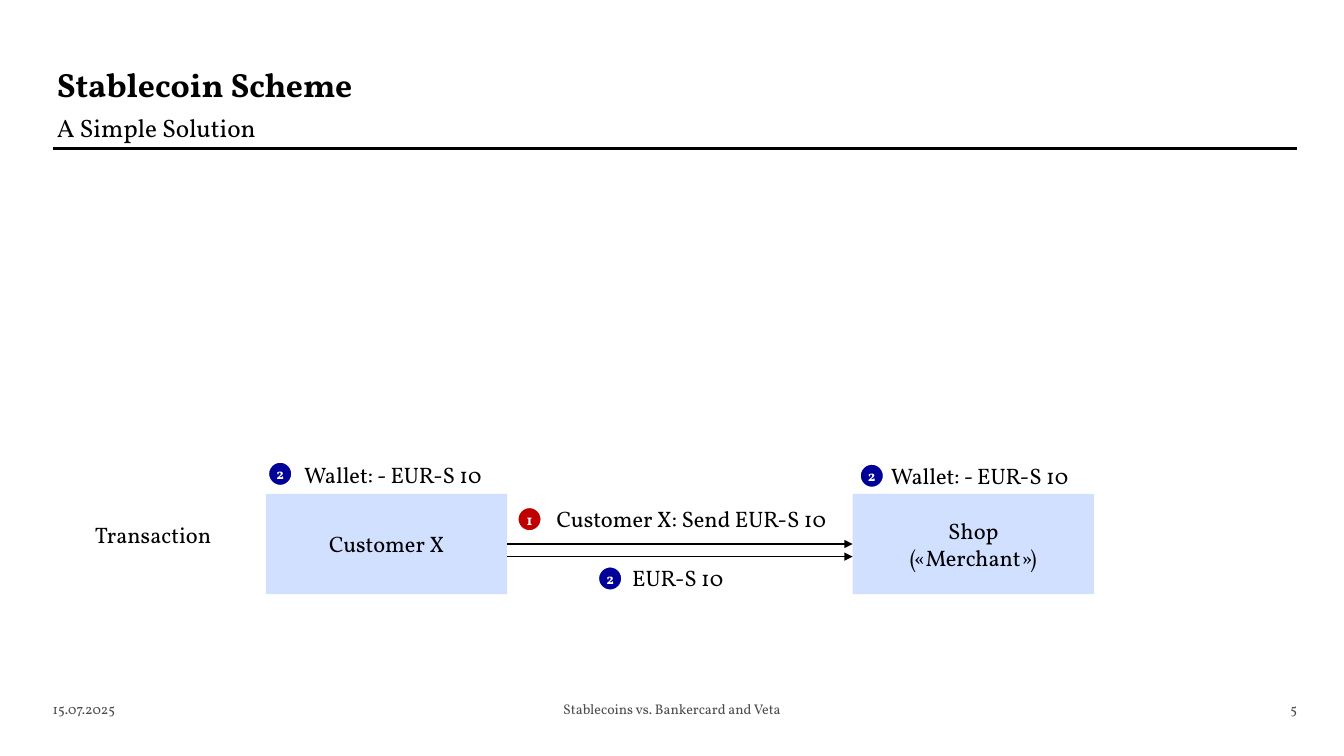
from dataclasses import dataclass

from lxml.etree import SubElement
from pptx import Presentation
from pptx.dml.color import RGBColor
from pptx.enum.shapes import MSO_CONNECTOR as Connector, MSO_SHAPE as Shape
from pptx.enum.text import MSO_ANCHOR as Anchor, MSO_AUTO_SIZE as AutoSize, PP_ALIGN as Align
from pptx.oxml.ns import qn
from pptx.util import Pt


@dataclass(frozen=True)
class Theme:
    font: str = "Vollkorn"
    ink: str = "000000"
    muted: str = "4D4D4D"
    light: str = "FFFFFF"
    party: str = "D1E0FF"
    request: str = "C00000"
    settlement: str = "000099"
    title: float = 24
    subtitle: float = 18
    label: float = 16
    badge: float = 10.5
    footer: float = 10


THEME = Theme()
INSET = 2.88
BADGE = 17.3


def write(shape, text, *, size=THEME.label, color=THEME.ink, bold=False, align=Align.LEFT,
          anchor=Anchor.TOP, inset=(INSET, INSET), spacing=None, after=0):
    """Fill a shape with one paragraph per line of text."""
    frame = shape.text_frame
    frame.auto_size = AutoSize.NONE
    frame.word_wrap = True
    frame.vertical_anchor = anchor
    frame.margin_left = frame.margin_right = Pt(inset[0])
    frame.margin_top = frame.margin_bottom = Pt(inset[1])
    frame.text = text
    for paragraph in frame.paragraphs:
        paragraph.alignment = align
        paragraph.line_spacing = spacing
        paragraph.space_before = Pt(0)
        paragraph.space_after = Pt(after)
        for run in paragraph.runs:
            font = run.font
            font.name, font.size, font.bold = THEME.font, Pt(size), bold
            font.color.rgb = RGBColor.from_string(color)


def place(shape, left, top, width, height):
    shape.left, shape.top, shape.width, shape.height = map(Pt, (left, top, width, height))


def add_text(slide, box, text, **style):
    write(slide.shapes.add_textbox(*map(Pt, box)), text, **style)


def add_filled(slide, kind, box, fill, outline=None):
    shape = slide.shapes.add_shape(kind, *map(Pt, box))
    shape.shadow.inherit = False
    shape.fill.solid()
    shape.fill.fore_color.rgb = RGBColor.from_string(fill)
    if outline:
        shape.line.color.rgb = RGBColor.from_string(outline)
        shape.line.width = Pt(1.5)
    else:
        shape.line.fill.background()
    return shape


def add_line(slide, start, end, width, arrow=False):
    line = slide.shapes.add_connector(Connector.STRAIGHT, *map(Pt, (*start, *end)))
    line.line.color.rgb = RGBColor.from_string(THEME.ink)
    line.line.width = Pt(width)
    if arrow:
        SubElement(line.line._get_or_add_ln(), qn("a:tailEnd"), type="triangle")
    SubElement(line._element.spPr, qn("a:effectLst"))
    return line


def add_heading(slide, left, top, width, title, subtitle):
    heading, body = slide.placeholders
    place(heading, left, top, 720, 28)
    write(heading, title, size=THEME.title, bold=True, spacing=0.9)
    place(body, left, top + 29.5, width, 24)
    write(body, subtitle, size=THEME.subtitle, spacing=1.1, after=4)
    properties = body.text_frame.paragraphs[0]._p.get_or_add_pPr()
    properties.set("marL", "0")
    properties.set("indent", "0")
    SubElement(properties, qn("a:buNone"))
    add_line(slide, (left, top + 60), (left + width, top + 60), 2.25)


def add_party(slide, box, name):
    party = add_filled(slide, Shape.RECTANGLE, box, THEME.party)
    write(party, name, align=Align.CENTER, anchor=Anchor.MIDDLE)
    return party


def add_step(slide, left, top, number, color, label, label_offset, label_width):
    """Numbered badge with its label to the right."""
    badge = add_filled(slide, Shape.OVAL, (left, top, BADGE, BADGE), color, THEME.light)
    write(badge, number, size=THEME.badge, color=THEME.light, bold=True,
          align=Align.CENTER, anchor=Anchor.MIDDLE)
    add_text(slide, (left + label_offset[0], top + label_offset[1], label_width, 26.6),
             label, inset=(7.2, 3.6))


def add_transaction(slide, left, top):
    party_width, party_height, gap = 172.3, 71.6, 246.7
    customer_left = left + 122.4
    customer_right = customer_left + party_width
    shop_left = customer_right + gap
    middle = top + party_height / 2

    add_text(slide, (left, top + 19.4, 99.4, 19.4), "Transaction", inset=(0, 0))
    customer = add_party(slide, (customer_left, top, party_width, party_height), "Customer X")
    shop = add_party(slide, (shop_left, top, party_width, party_height), "Shop\n(«Merchant»)")

    # Request and transfer arrows
    request = add_line(slide, (customer_right, middle), (shop_left, middle), 0.75, arrow=True)
    request.begin_connect(customer, 3)
    request.end_connect(shop, 1)
    transfer = middle + 9
    add_line(slide, (customer_right, transfer), (shop_left, transfer), 0.75, arrow=True)

    # Numbered steps
    wallet = "Wallet: - EUR-S 10"
    steps = [
        (customer_right + 7.2, top + 9.4, "1", THEME.request,
         "Customer X: Send EUR-S 10", (20.9, -5), 226),
        (customer_left + 1.4, top - 23, "2", THEME.settlement, wallet, (18.7, -3.6), 152),
        (shop_left + 5, top - 21.6, "2", THEME.settlement, wallet, (15.1, -4.3), 152),
        (customer_right + 64.8, top + 51.8, "2", THEME.settlement, "EUR-S 10", (17.3, -5), 84),
    ]
    for step in steps:
        add_step(slide, *step)


def add_footer(slide, left, top, width, date, title, number):
    for text, align in ((date, Align.LEFT), (title, Align.CENTER), (number, Align.RIGHT)):
        part_width = 324 if align == Align.CENTER else 180
        part_left = {Align.LEFT: left, Align.CENTER: 480 - part_width / 2,
                     Align.RIGHT: left + width - part_width}[align]
        add_text(slide, (part_left, top, part_width, 11.5), text, size=THEME.footer,
                 color=THEME.muted, align=align, anchor=Anchor.MIDDLE, inset=(0, 0))


def main():
    presentation = Presentation()
    presentation.slide_width, presentation.slide_height = Pt(960), Pt(540)
    slide = presentation.slides.add_slide(presentation.slide_layouts[1])
    left, width = 37.7, 888.9
    add_heading(slide, left, 46, width, "Stablecoin Scheme", "A Simple Solution")
    add_transaction(slide, 67.7, 352.8)
    add_footer(slide, left, 500.4, width, "15.07.2025",
               "Stablecoins vs. Bankercard and Veta", "5")
    presentation.save("out.pptx")


if __name__ == "__main__":
    main()
